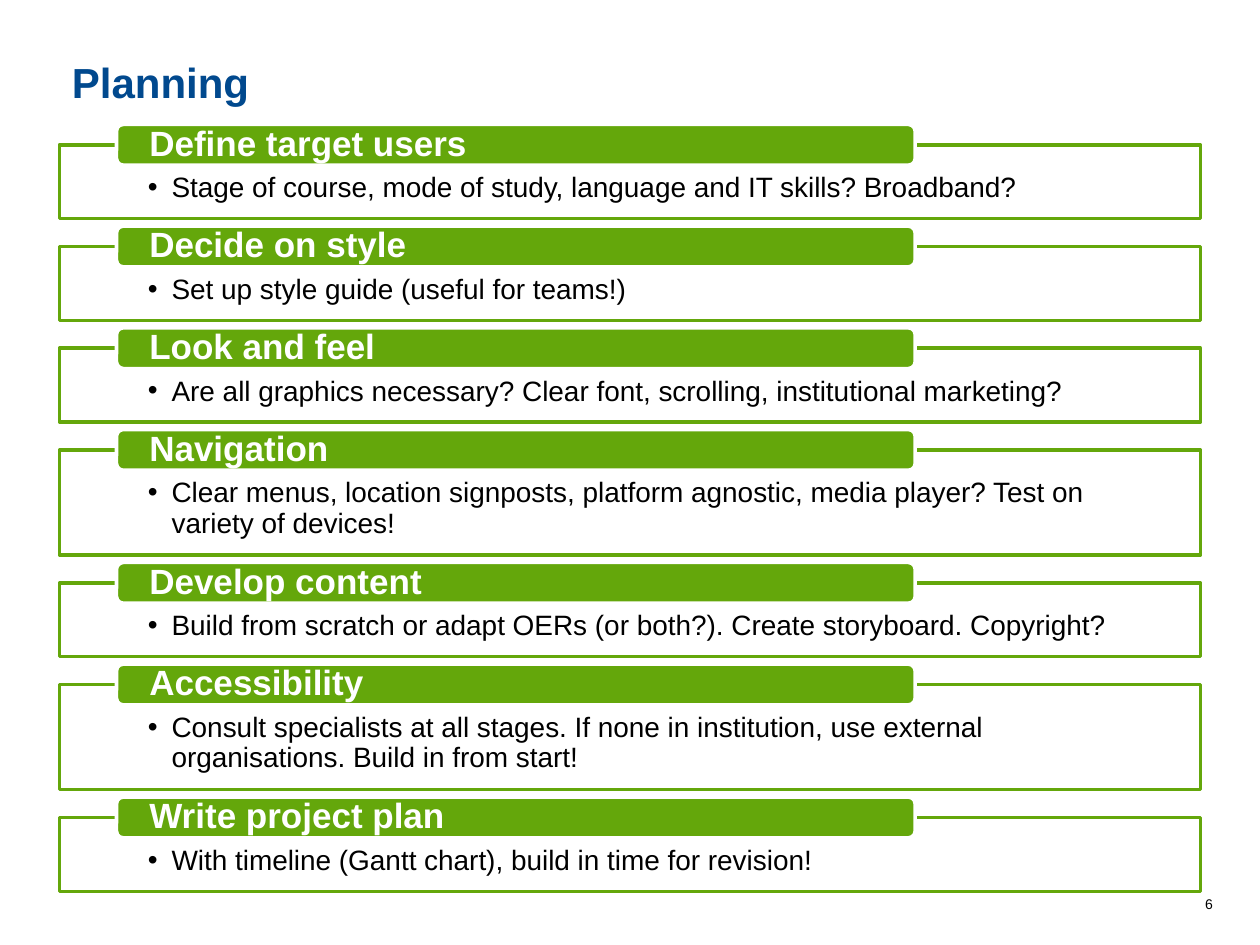
from lxml.etree import SubElement
from pptx import Presentation
from pptx.dml.color import RGBColor
from pptx.enum.shapes import MSO_SHAPE
from pptx.enum.text import MSO_ANCHOR, PP_ALIGN
from pptx.oxml.ns import qn
from pptx.util import Cm, Pt

GREEN = RGBColor(0x64, 0xA7, 0x0B)
BLUE = RGBColor(0x01, 0x49, 0x8E)
WHITE = RGBColor(0xFF, 0xFF, 0xFF)
BLACK = RGBColor(0x00, 0x00, 0x00)

STEPS = [
    ("Define target users", "Stage of course, mode of study, language and IT skills? Broadband?", 1),
    ("Decide on style", "Set up style guide (useful for teams!)", 1),
    ("Look and feel", "Are all graphics necessary? Clear font, scrolling, institutional marketing?", 1),
    ("Navigation", "Clear menus, location signposts, platform agnostic, media player? Test on variety of devices!", 2),
    ("Develop content", "Build from scratch or adapt OERs (or both?). Create storyboard. Copyright?", 1),
    ("Accessibility", "Consult specialists at all stages. If none in institution, use external organisations. Build in from start!", 2),
    ("Write project plan", "With timeline (Gantt chart), build in time for revision!", 1),
]
BOX_HEIGHTS = {1: 1.49, 2: 2.12}
GAP = 0.56


def add_text(box, text, size, color, bold=False, align=PP_ALIGN.LEFT):
    box.text_frame.word_wrap = True
    para = box.text_frame.paragraphs[0]
    para.alignment = align
    span = para.add_run()
    span.text = text
    span.font.name = "Arial"
    span.font.size = Pt(size)
    span.font.bold = bold
    span.font.color.rgb = color
    return para


def add_panel(page, kind, left, top, width, height, fill, line, insets, anchor):
    panel = page.shapes.add_shape(kind, Cm(left), Cm(top), Cm(width), Cm(height))
    panel.shadow.inherit = False
    panel.fill.solid()
    panel.fill.fore_color.rgb = fill
    panel.line.color.rgb = line
    panel.line.width = Pt(2)
    frame = panel.text_frame
    frame.vertical_anchor = anchor
    side, above, below = insets
    frame.margin_left = frame.margin_right = Cm(side)
    frame.margin_top = Cm(above)
    frame.margin_bottom = Cm(below)
    return panel


deck = Presentation()
deck.slide_width = Cm(25.4)
deck.slide_height = Cm(19.05)
page = deck.slides.add_slide(deck.slide_layouts[6])

number = page.shapes.add_textbox(Cm(13.7), Cm(17.93), Cm(11), Cm(0.61))
add_text(number, "6", 8, BLACK, align=PP_ALIGN.RIGHT)

title = page.shapes.add_textbox(Cm(1.2), Cm(1.02), Cm(23), Cm(1.5))
add_text(title, "Planning", 24, BLUE, bold=True)

top = 2.92
for heading, detail, lines in STEPS:
    height = BOX_HEIGHTS[lines]
    body = add_panel(page, MSO_SHAPE.RECTANGLE, 1.2, top, 23, height,
                     WHITE, GREEN, (1.78, 0.58, 0.3), MSO_ANCHOR.TOP)
    white = body.fill._xPr.find(qn("a:solidFill")).find(qn("a:srgbClr"))
    SubElement(white, qn("a:alpha")).set("val", "90000")
    para = add_text(body, detail, 16, BLACK)
    para.line_spacing = 0.9
    properties = para._p.get_or_add_pPr()
    properties.set("marL", str(Cm(0.48)))
    properties.set("indent", str(-Cm(0.48)))
    SubElement(properties, qn("a:buFont")).set("typeface", "Arial")
    SubElement(properties, qn("a:buChar")).set("char", "•")

    banner = add_panel(page, MSO_SHAPE.ROUNDED_RECTANGLE, 2.35, top - 0.41, 16.1, 0.82,
                       GREEN, WHITE, (0.62, 0, 0), MSO_ANCHOR.MIDDLE)
    add_text(banner, heading, 20, WHITE, bold=True).line_spacing = 0.9
    top += height + GAP

deck.save("out.pptx")
